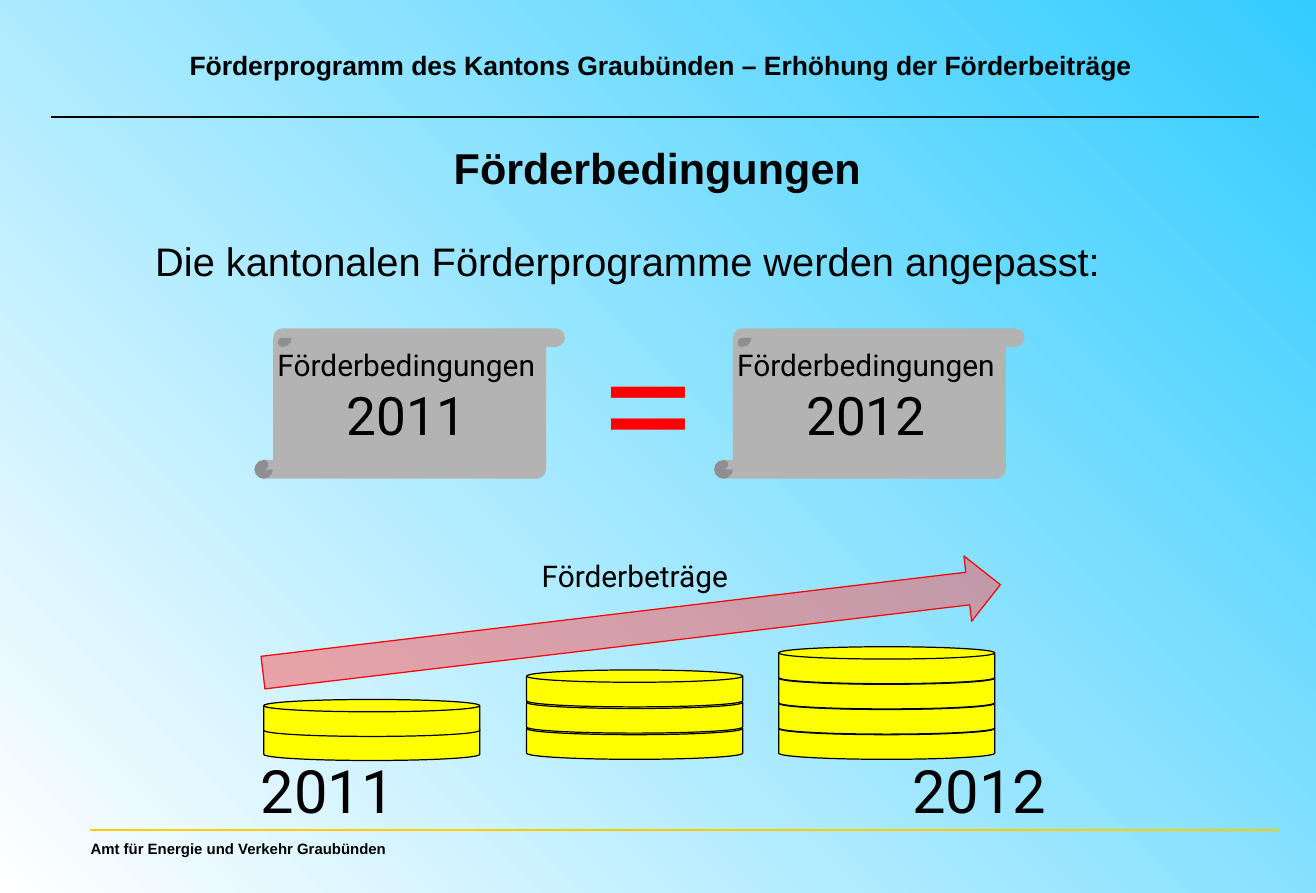
from lxml import etree
from pptx import Presentation
from pptx.dml.color import RGBColor
from pptx.enum.shapes import MSO_CONNECTOR, MSO_SHAPE
from pptx.enum.text import MSO_ANCHOR, PP_ALIGN
from pptx.oxml.ns import qn
from pptx.util import Pt

LEFT, CENTER = PP_ALIGN.LEFT, PP_ALIGN.CENTER
TOP, MIDDLE = MSO_ANCHOR.TOP, MSO_ANCHOR.MIDDLE
SCROLL = MSO_SHAPE.VERTICAL_SCROLL
DISK = MSO_SHAPE.FLOWCHART_MAGNETIC_DISK
ARROW = MSO_SHAPE.RIGHT_ARROW

COLORS = {
    "black": "000000", "white": "FFFFFF", "sky": "33CCFF", "gold": "FFCC00",
    "gray": "B3B3B3", "yellow": "FFFF00", "red": "FF0000", "rose": "FF5050",
}

# Content: text, box (left, top, width, height), font, size, bold, color, alignment, anchor
HEADINGS = [
    ("Amt für Energie und Verkehr Graubünden", (47.5, 502.5, 198, 18),
     "Arial", 9, True, "black", LEFT, MIDDLE),
    ("Förderprogramm des Kantons Graubünden – Erhöhung der Förderbeiträge",
     (103.5, 26, 590, 26.5), "Arial", 16, True, "black", CENTER, TOP),
    ("Förderbedingungen", (265, 82, 263, 39), "Arial", 26, True, "black", CENTER, TOP),
    ("Die kantonalen Förderprogramme werden angepasst:", (86.5, 139, 645, 36),
     "Arial", 24, False, "black", LEFT, TOP),
    ("=", (357, 178.5, 73.5, 124), "Times New Roman", 96, True, "red", LEFT, TOP),
    ("Förderbeträge", (319.5, 332.5, 130, 28.5), "Roboto", 18, False, "black", LEFT, TOP),
    ("2011", (150, 450.8, 96, 49.5), "Roboto", 36, False, "black", LEFT, TOP),
    ("2012", (543, 450.8, 96, 49.5), "Roboto", 36, False, "black", LEFT, TOP),
]
RULES = [  # left, right, y, color, width
    (31, 759, 70.5, "black", 0.75),
    (54.5, 771, 500.4, "gold", 1),
]
SCROLLS = [("2011", 153.4), ("2012", 430.6)]  # year, left
SCROLL_TOP, SCROLL_SIZE = 198, (187.2, 90.7)
SCROLL_TITLE = "Förderbedingungen"
STACKS = [  # left, coins, top of the lowest coin, step
    (159, 2, 436.3, 14.5),
    (317.5, 3, 435.6, 15.8),
    (469.5, 4, 435.6, 15.2),
]
COIN_SIZE = (130.3, 22.3)
ARROW_BOX, ARROW_ROTATION, ARROW_ALPHA = (157, 359.3, 447.8, 39.6), -6.8, 49

presentation = Presentation()
presentation.slide_width, presentation.slide_height = Pt(793.5), Pt(538.5)
slide = presentation.slides.add_slide(presentation.slide_layouts[6])


def rgb(name):
    return RGBColor.from_string(COLORS[name])


def add_run(paragraph, text, font, size, bold, color):
    run = paragraph.add_run()
    run.text = text
    run.font.name, run.font.size, run.font.bold = font, Pt(size), bold
    run.font.color.rgb = rgb(color)


def add_text(text, box, font, size, bold, color, alignment, anchor):
    frame = slide.shapes.add_textbox(*map(Pt, box)).text_frame
    frame.word_wrap = False
    frame.vertical_anchor = anchor
    paragraph = frame.paragraphs[0]
    paragraph.alignment = alignment
    add_run(paragraph, text, font, size, bold, color)


def add_shape(kind, box, fill, line=None):
    shape = slide.shapes.add_shape(kind, *map(Pt, box))
    shape.shadow.inherit = False
    shape.fill.solid()
    shape.fill.fore_color.rgb = rgb(fill)
    if line:
        shape.line.color.rgb = rgb(line)
        shape.line.width = Pt(0.75)
    else:
        shape.line.fill.background()
    return shape


# Background
background = slide.background.fill
background.gradient()
background.gradient_angle = 45
for stop, name, position in zip(background.gradient_stops, ("white", "sky"), (0, 1)):
    stop.color.rgb = rgb(name)
    stop.position = position

# Rules under the header and above the footer
for left, right, y, color, width in RULES:
    rule = slide.shapes.add_connector(
        MSO_CONNECTOR.STRAIGHT, Pt(left), Pt(y), Pt(right), Pt(y))
    rule.line.color.rgb = rgb(color)
    rule.line.width = Pt(width)
    etree.SubElement(rule.element.spPr, qn("a:effectLst"))

# Headings and labels
for heading in HEADINGS:
    add_text(*heading)

# Scrolls with the conditions of each year
for year, left in SCROLLS:
    scroll = add_shape(SCROLL, (left, SCROLL_TOP, *SCROLL_SIZE), "gray")
    frame = scroll.text_frame
    frame.word_wrap = True
    frame.vertical_anchor = TOP
    frame.margin_left = frame.margin_top = frame.margin_bottom = 0
    frame.margin_right = Pt(4)
    for paragraph, text, size in (
            (frame.paragraphs[0], SCROLL_TITLE, 18), (frame.add_paragraph(), year, 32)):
        paragraph.alignment = CENTER
        add_run(paragraph, text, "Roboto", size, False, "black")

# Coin stacks, each built from the bottom up
for left, coins, bottom, step in STACKS:
    for level in range(coins):
        add_shape(DISK, (left, bottom - level * step, *COIN_SIZE), "yellow", "black")

# Rising arrow
arrow = add_shape(ARROW, ARROW_BOX, "rose", "red")
arrow.rotation = ARROW_ROTATION
arrow_color = arrow.element.spPr.find(qn("a:solidFill")).find(qn("a:srgbClr"))
etree.SubElement(arrow_color, qn("a:alpha"), val=str(ARROW_ALPHA * 1000))

presentation.save("out.pptx")
